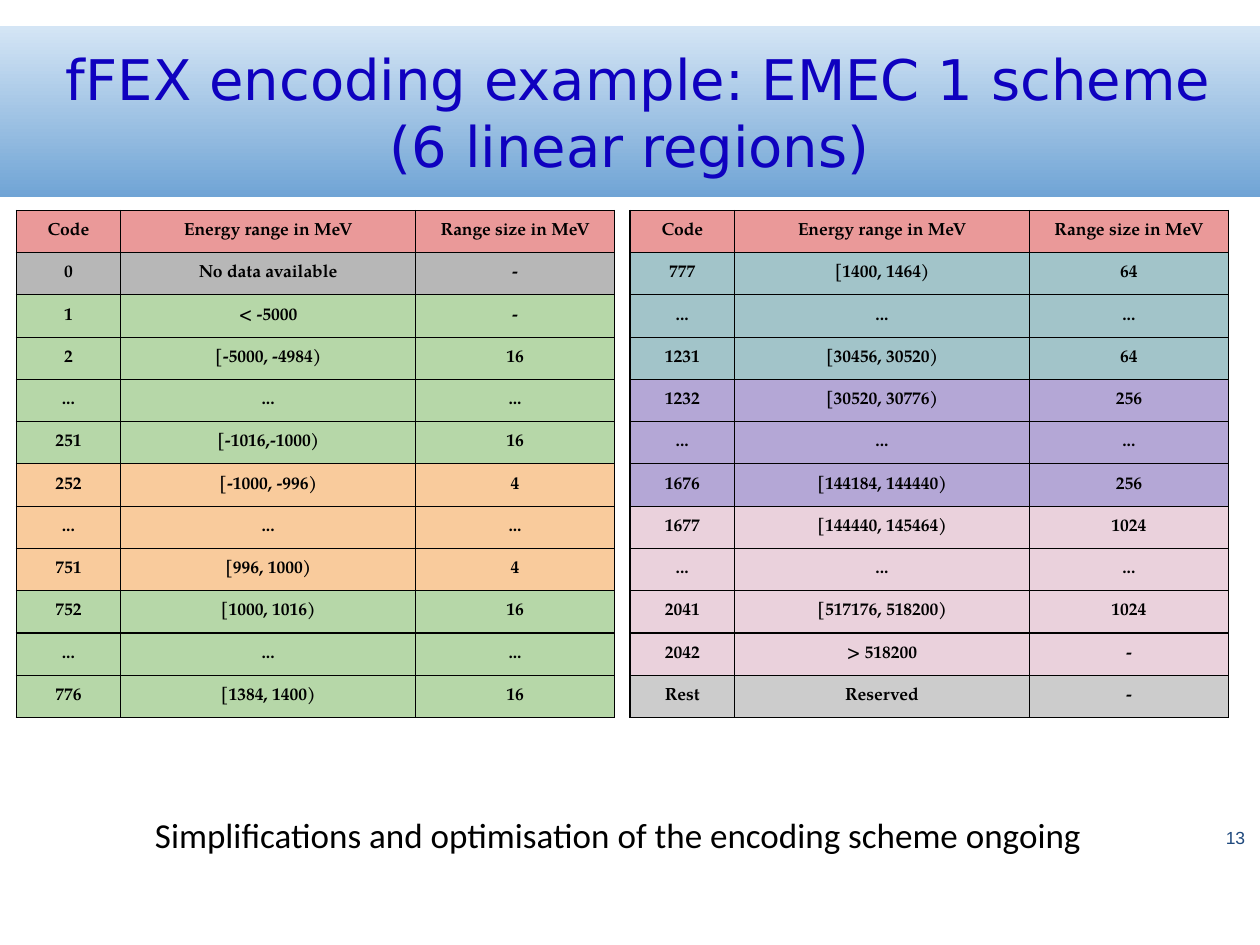
from lxml import etree
from pptx import Presentation
from pptx.dml.color import RGBColor
from pptx.enum.text import MSO_ANCHOR, MSO_AUTO_SIZE, PP_ALIGN
from pptx.oxml.ns import qn
from pptx.util import Pt

CENTER, RIGHT = PP_ALIGN.CENTER, PP_ALIGN.RIGHT
MIDDLE, TOP = MSO_ANCHOR.MIDDLE, MSO_ANCHOR.TOP
NO_AUTOFIT = MSO_AUTO_SIZE.NONE
TITLE_ONLY = 5

BLACK = RGBColor(0x00, 0x00, 0x00)
TITLE_BLUE = RGBColor(0x0F, 0x01, 0xBF)
BAND_LIGHT = RGBColor(0xD4, 0xE5, 0xF5)
BAND_DARK = RGBColor(0x70, 0xA4, 0xD5)
NAVY = RGBColor(0x1F, 0x49, 0x7D)
RED = RGBColor(0xEA, 0x99, 0x99)
GRAY = RGBColor(0xB7, 0xB7, 0xB7)
LIGHT_GRAY = RGBColor(0xCC, 0xCC, 0xCC)
GREEN = RGBColor(0xB6, 0xD7, 0xA8)
ORANGE = RGBColor(0xF9, 0xCB, 0x9C)
TEAL = RGBColor(0xA2, 0xC4, 0xC9)
PURPLE = RGBColor(0xB4, 0xA7, 0xD6)
PINK = RGBColor(0xEA, 0xD1, 0xDC)

INSET = Pt(7.2)
COLUMN_WIDTHS = (59.76, 168.48, 113.76)
ROW_HEIGHT = 24.1
BORDER_WIDTH = 0.75
HEADER = (RED, "Code", "Energy range in MeV", "Range size in MeV")

LOW_CODES = [
    (GRAY, "0", "No data available", "-"),
    (GREEN, "1", "< -5000", "-"),
    (GREEN, "2", "[-5000, -4984)", "16"),
    (GREEN, "...", "...", "..."),
    (GREEN, "251", "[-1016,-1000)", "16"),
    (ORANGE, "252", "[-1000, -996)", "4"),
    (ORANGE, "...", "...", "..."),
    (ORANGE, "751", "[996, 1000)", "4"),
    (GREEN, "752", "[1000, 1016)", "16"),
    (GREEN, "...", "...", "..."),
    (GREEN, "776", "[1384, 1400)", "16"),
]
HIGH_CODES = [
    (TEAL, "777", "[1400, 1464)", "64"),
    (TEAL, "...", "...", "..."),
    (TEAL, "1231", "[30456, 30520)", "64"),
    (PURPLE, "1232", "[30520, 30776)", "256"),
    (PURPLE, "...", "...", "..."),
    (PURPLE, "1676", "[144184, 144440)", "256"),
    (PINK, "1677", "[144440, 145464)", "1024"),
    (PINK, "...", "...", "..."),
    (PINK, "2041", "[517176, 518200)", "1024"),
    (PINK, "2042", "> 518200", "-"),
    (LIGHT_GRAY, "Rest", "Reserved", "-"),
]


def write_text(text_frame, text, font_name, size, color, alignment, bold=False):
    text_frame.text = text
    paragraph = text_frame.paragraphs[0]
    paragraph.alignment = alignment
    font = paragraph.runs[0].font
    font.name, font.size, font.bold = font_name, Pt(size), bold
    font.color.rgb = color


def set_insets(target):
    target.margin_left = target.margin_right = INSET
    target.margin_top = target.margin_bottom = INSET


def place_title(slide, left, top, width, height):
    title = slide.shapes.title
    title.left, title.top = Pt(left), Pt(top)
    title.width, title.height = Pt(width), Pt(height)
    title.fill.gradient()
    title.fill.gradient_angle = 270
    for stop, color, position in zip(
            title.fill.gradient_stops, (BAND_LIGHT, BAND_DARK), (0, 1)):
        stop.color.rgb = color
        stop.position = position
    text_frame = title.text_frame
    write_text(text_frame, " fFEX encoding example: EMEC 1 scheme (6 linear regions)",
               "DejaVu Sans", 32, TITLE_BLUE, CENTER)
    set_insets(text_frame)
    text_frame.word_wrap = True
    text_frame.auto_size = NO_AUTOFIT
    text_frame.vertical_anchor = MIDDLE


def add_borders(cell):
    """Outline all four sides; borders must precede the fill in the cell's XML."""
    properties = cell._tc.get_or_add_tcPr()
    for index, side in enumerate(("a:lnL", "a:lnR", "a:lnT", "a:lnB")):
        line = etree.Element(qn(side), w=str(Pt(BORDER_WIDTH)))
        fill = etree.SubElement(line, qn("a:solidFill"))
        etree.SubElement(fill, qn("a:srgbClr"), val=str(BLACK))
        properties.insert(index, line)


def place_code_table(slide, code_rows, left, top):
    rows = [HEADER, *code_rows]
    frame = slide.shapes.add_table(
        len(rows), len(COLUMN_WIDTHS), Pt(left), Pt(top),
        Pt(sum(COLUMN_WIDTHS)), Pt(ROW_HEIGHT * len(rows)))
    table = frame.table
    for column, width in zip(table.columns, COLUMN_WIDTHS):
        column.width = Pt(width)
    for table_row, (color, *texts) in zip(table.rows, rows):
        table_row.height = Pt(ROW_HEIGHT)
        for cell, text in zip(table_row.cells, texts):
            write_text(cell.text_frame, text, "TeX Gyre Pagella", 10, BLACK,
                       CENTER, bold=True)
            set_insets(cell)
            cell.vertical_anchor = TOP
            cell.fill.solid()
            cell.fill.fore_color.rgb = color
            add_borders(cell)


def add_text_box(slide, left, top, width, height):
    box = slide.shapes.add_textbox(Pt(left), Pt(top), Pt(width), Pt(height))
    box.text_frame.word_wrap = True
    return box.text_frame


def place_page_number(slide, left, top, width, height):
    text_frame = add_text_box(slide, left, top, width, height)
    write_text(text_frame, "13", "Arial", 10, NAVY, RIGHT)
    set_insets(text_frame)
    text_frame.vertical_anchor = MIDDLE


def place_remark(slide, left, top, width, height):
    text_frame = add_text_box(slide, left, top, width, height)
    write_text(text_frame, "Simplifications and optimisation of the encoding scheme ongoing",
               "Calibri", 20, BLACK, CENTER)


def main():
    presentation = Presentation()
    presentation.slide_width, presentation.slide_height = Pt(720), Pt(540)
    slide = presentation.slides.add_slide(presentation.slide_layouts[TITLE_ONLY])
    place_title(slide, 0, 15, 720, 97.8)
    place_code_table(slide, LOW_CODES, 9.2, 120.2)
    place_code_table(slide, HIGH_CODES, 360, 120.2)
    place_page_number(slide, 675.4, 463, 43.2, 31)
    place_remark(slide, 31, 461.5, 644.4, 31.7)
    presentation.save("out.pptx")


if __name__ == "__main__":
    main()
